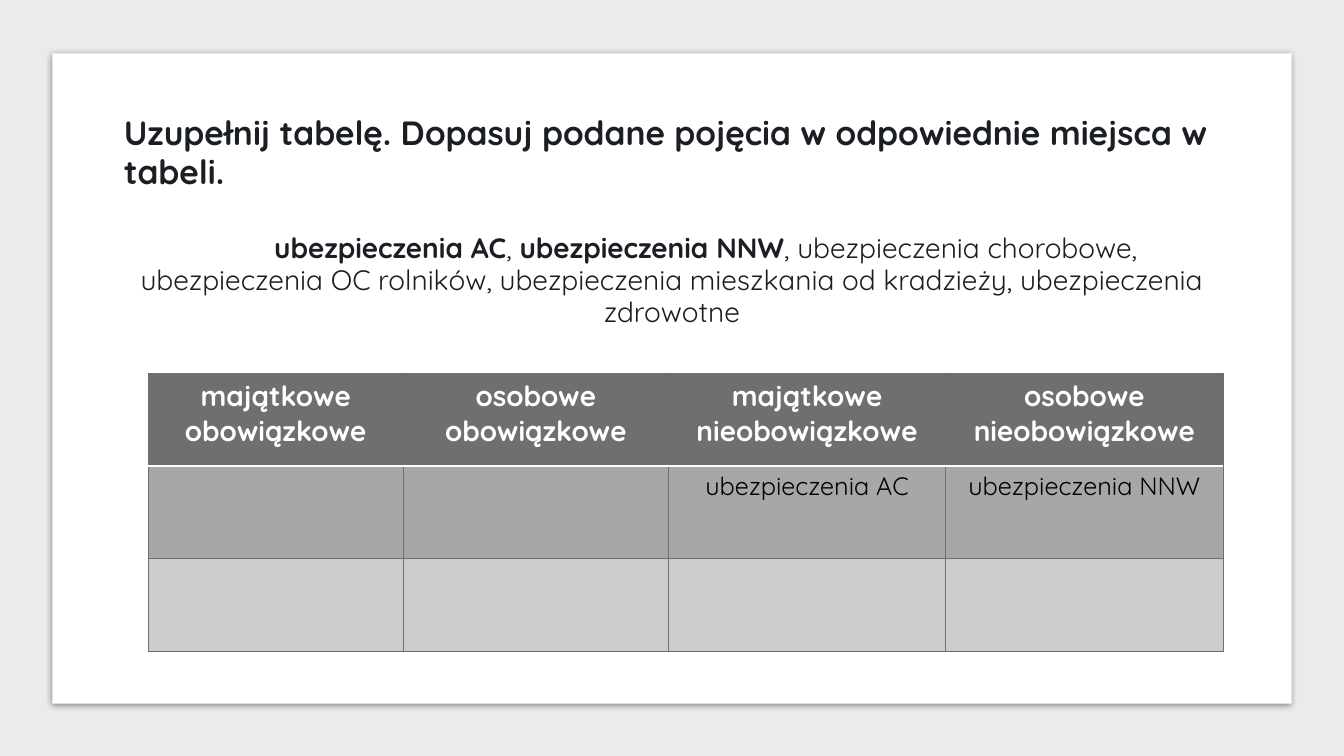
from lxml.etree import SubElement
from pptx import Presentation
from pptx.dml.color import RGBColor
from pptx.enum.shapes import MSO_SHAPE as Preset
from pptx.enum.text import MSO_AUTO_SIZE as AutoSize, PP_ALIGN as Align
from pptx.oxml.ns import qn
from pptx.util import Inches, Pt

FONT = "Quicksand"
BACKDROP = RGBColor(0x36, 0x3D, 0x46)
FRAME = RGBColor(0xEB, 0xEB, 0xEB)
WHITE = RGBColor(0xFF, 0xFF, 0xFF)
BLACK = RGBColor(0, 0, 0)
INK = RGBColor(0x1B, 0x1F, 0x23)
HEADER = RGBColor(0x6F, 0x6F, 0x6F)
ROW_FILLS = [HEADER, RGBColor(0xA7, 0xA7, 0xA7), RGBColor(0xCD, 0xCD, 0xCD)]

TITLE = "Uzupełnij tabelę. Dopasuj podane pojęcia w odpowiednie miejsca w tabeli."
TERMS = [
    ("ubezpieczenia AC", True),
    (", ", False),
    ("ubezpieczenia NNW", True),
    (", ubezpieczenia chorobowe, ubezpieczenia OC rolników, ubezpieczenia "
     "mieszkania od kradzieży, ubezpieczenia zdrowotne", False),
]
COLUMN_WIDTHS = [2.53, 2.63, 2.75, 2.75]
ROW_HEIGHT = 0.92
ROWS = [
    ["majątkowe obowiązkowe", "osobowe obowiązkowe",
     "majątkowe nieobowiązkowe", "osobowe nieobowiązkowe"],
    ["", "", "ubezpieczenia AC", "ubezpieczenia NNW"],
    ["", "", "", ""],
]


def add_panel(slide, left, top, width, height, color):
    """Add a plain filled rectangle without outline."""
    panel = slide.shapes.add_shape(
        Preset.RECTANGLE, Inches(left), Inches(top), Inches(width), Inches(height))
    panel.shadow.inherit = False
    panel.fill.solid()
    panel.fill.fore_color.rgb = color
    panel.line.fill.background()
    return panel


def add_shadow(panel):
    """Give the panel a soft shadow falling downwards."""
    effects = panel._element.spPr.find(qn("a:effectLst"))
    shadow = SubElement(effects, qn("a:outerShdw"), blurRad=str(Pt(5)),
                        dist=str(Pt(1.4)), dir="5400000", rotWithShape="0")
    tint = SubElement(shadow, qn("a:srgbClr"), val=str(BLACK))
    SubElement(tint, qn("a:alpha"), val="43000")


def add_run(paragraph, text, size, color, bold):
    """Add one formatted run to a paragraph."""
    run = paragraph.add_run()
    run.text = text
    run.font.name = FONT
    run.font.size = Pt(size)
    run.font.bold = bold
    run.font.color.rgb = color


def add_task(slide):
    """Add the instruction and the terms to be sorted."""
    task = slide.shapes.add_textbox(
        Inches(1.13), Inches(1.09), Inches(11.07), Inches(2.3))
    frame = task.text_frame
    frame.word_wrap = True
    frame.auto_size = AutoSize.SHAPE_TO_FIT_TEXT
    title = frame.paragraphs[0]
    title.line_spacing = 0.96
    add_run(title, TITLE, 24, INK, True)
    terms = frame.add_paragraph()
    terms.alignment = Align.CENTER
    terms.line_spacing = 0.96
    terms.space_before = Pt(28.8)
    terms._p.get_or_add_pPr().set("indent", str(Inches(0.67)))
    for text, bold in TERMS:
        add_run(terms, text, 20, INK, bold)


def set_border(cell, side, color, width):
    """Draw one side of a cell border."""
    line = SubElement(cell._tc.get_or_add_tcPr(), qn(f"a:{side}"), w=str(Pt(width)))
    fill = SubElement(line, qn("a:solidFill"))
    SubElement(fill, qn("a:srgbClr"), val=str(color))


def fill_cell(cell, text, row):
    """Set borders, fill and text of one table cell."""
    is_header = row == 0
    white_side = {0: "lnB", 1: "lnT"}.get(row)
    for side in ("lnL", "lnR", "lnT", "lnB"):
        color, width = (WHITE, 1.47) if side == white_side else (HEADER, 0.75)
        set_border(cell, side, color, width)
    cell.fill.solid()
    cell.fill.fore_color.rgb = ROW_FILLS[row]
    cell.margin_left = cell.margin_right = Inches(0.18)
    cell.margin_top = cell.margin_bottom = Inches(0.05)
    if text:
        paragraph = cell.text_frame.paragraphs[0]
        paragraph.alignment = Align.CENTER
        add_run(paragraph, text, 20 if is_header else 18,
                WHITE if is_header else BLACK, is_header)


def add_insurance_table(slide):
    """Add the table of insurance kinds."""
    table = slide.shapes.add_table(
        len(ROWS), len(COLUMN_WIDTHS), Inches(1.47), Inches(3.7),
        Inches(sum(COLUMN_WIDTHS)), Inches(ROW_HEIGHT * len(ROWS))).table
    for column, width in zip(table.columns, COLUMN_WIDTHS):
        column.width = Inches(width)
    for row, texts in enumerate(ROWS):
        table.rows[row].height = Inches(ROW_HEIGHT)
        for column, text in enumerate(texts):
            fill_cell(table.cell(row, column), text, row)


def main():
    """Build the slide and save it."""
    deck = Presentation()
    deck.slide_width, deck.slide_height = Inches(13.33), Inches(7.5)
    slide = deck.slides.add_slide(deck.slide_layouts[6])
    slide.background.fill.solid()
    slide.background.fill.fore_color.rgb = BACKDROP
    add_panel(slide, 0, 0, 13.33, 7.5, FRAME)
    add_shadow(add_panel(slide, 0.52, 0.53, 12.29, 6.45, WHITE))
    add_insurance_table(slide)
    add_task(slide)
    deck.save("out.pptx")


if __name__ == "__main__":
    main()
